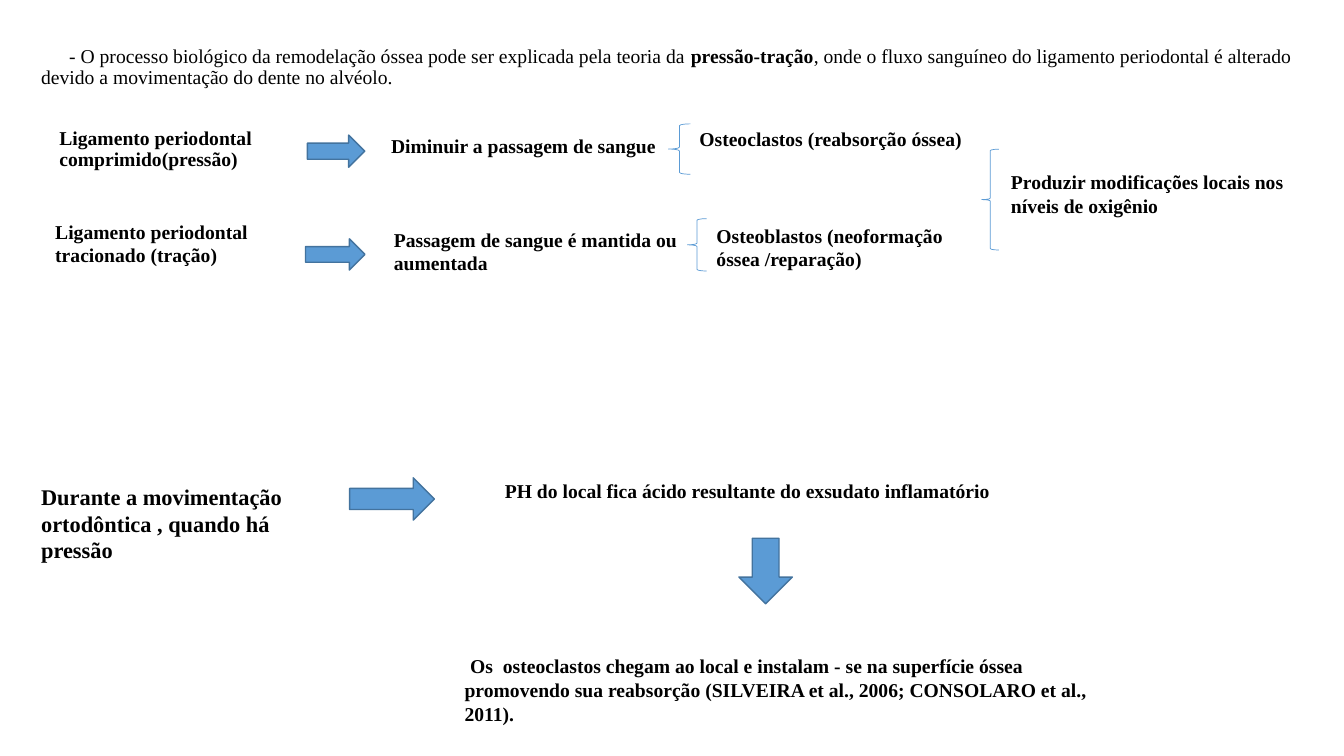
from pptx import Presentation
from pptx.dml.color import RGBColor
from pptx.enum.shapes import MSO_SHAPE as Preset
from pptx.enum.text import MSO_ANCHOR as Anchor, MSO_AUTO_SIZE as AutoSize
from pptx.util import Pt

SERIF = "Times New Roman"
BOLD = {"name": SERIF, "size": Pt(14), "bold": True}
PLAIN = {**BOLD, "bold": False}
LARGE = {**BOLD, "size": Pt(16)}
LEAD = {"name": "Calibri", "size": Pt(18), "bold": False}
BLACK, BLUE, DARK_BLUE = "000000", "5B9BD5", "43739E"


def color(hex_value):
    return RGBColor.from_string(hex_value)


def apply_format(target, values):
    for name, value in values.items():
        setattr(target, name, value)


def place(origin, offset):
    left, top, width, height = offset
    return Pt(origin[0] + left), Pt(origin[1] + top), Pt(width), Pt(height)


def add_text(slide, origin, offset, pieces, frame=None, paragraph=None):
    text_frame = slide.shapes.add_textbox(*place(origin, offset)).text_frame
    apply_format(text_frame, {"word_wrap": True, "auto_size": AutoSize.NONE, **(frame or {})})
    line = text_frame.paragraphs[0]
    apply_format(line, paragraph or {})
    for words, font_format in pieces:
        run = line.add_run()
        run.text = words
        apply_format(run.font, font_format)
        run.font.color.rgb = color(BLACK)


def add_arrow(slide, origin, offset, preset=Preset.RIGHT_ARROW):
    arrow = slide.shapes.add_shape(preset, *place(origin, offset))
    arrow.shadow.inherit = False
    arrow.fill.solid()
    arrow.fill.fore_color.rgb = color(BLUE)
    arrow.line.color.rgb = color(DARK_BLUE)
    arrow.line.width = Pt(1)


def add_brace(slide, origin, offset):
    brace = slide.shapes.add_shape(Preset.LEFT_BRACE, *place(origin, offset))
    brace.shadow.inherit = False
    brace.fill.background()
    brace.line.color.rgb = color(BLUE)
    brace.line.width = Pt(0.5)


def add_theory(slide, box):
    left, top, width, height = box
    pieces = [
        ("- O processo biológico da remodelação óssea pode ser explicada pela teoria da ", PLAIN),
        ("pressão-tração", BOLD),
        (", onde o fluxo sanguíneo do ligamento periodontal é alterado devido a "
         "movimentação do dente no alvéolo.", PLAIN),
    ]
    add_text(slide, (left, top), (0, 0, width, height), pieces,
             {"vertical_anchor": Anchor.MIDDLE}, {"line_spacing": 0.9})
    intro = slide.shapes[-1].text_frame.paragraphs[0]
    intro._p.get_or_add_pPr().set("indent", str(Pt(20)))


def add_pressure(slide, box):
    origin = box[:2]
    add_text(slide, origin, (0, 1.4, 171.4, 37.4),
             [("Ligamento periodontal comprimido(pressão)", BOLD)],
             paragraph={"line_spacing": 0.9})
    add_arrow(slide, origin, (184.3, 9.4, 41, 23))
    add_text(slide, origin, (236.9, 5, 330.5, 24.5), [("Diminuir a passagem de sangue", BOLD)])
    add_brace(slide, origin, (442.1, 1.4, 15.8, 36))
    add_text(slide, origin, (457.2, 0, 203.8, 24.5),
             [("Osteoclastos (reabsorção óssea)", BOLD)], {"word_wrap": False})


def add_traction(slide, box):
    origin = box[:2]
    add_text(slide, origin, (0, 0, 196.6, 41),
             [("Ligamento periodontal tracionado (tração)", BOLD)])
    add_arrow(slide, origin, (185.8, 17.2, 42.5, 22.3))
    add_text(slide, origin, (241.9, 5.7, 220.3, 41),
             [("Passagem de sangue é mantida ou aumentada", BOLD)])
    add_brace(slide, origin, (458.6, 2.8, 13.7, 37.4))
    add_text(slide, origin, (472.3, 2.8, 194.4, 41),
             [("Osteoblastos (neoformação óssea /reparação)", BOLD)])


def add_oxygen(slide, box):
    left, top, width, height = box
    add_brace(slide, (left, top), (0, 0, 12.2, height))
    add_text(slide, (left, top), (13.7, 11.5, width - 13.7, 41),
             [("Produzir modificações locais nos níveis de oxigênio", BOLD)])


def add_acid_cascade(slide, box):
    origin = box[:2]
    add_text(slide, origin, (0, 2.9, 200.9, 65.5),
             [("Durante a movimentação ortodôntica , quando há pressão", LARGE)])
    add_arrow(slide, origin, (227.5, 2.9, 60.5, 30.2))
    add_text(slide, origin, (331.2, 0, 363.6, 24.5),
             [("PH do local fica ácido resultante do exsudato inflamatório", BOLD)],
             {"word_wrap": False})
    add_arrow(slide, origin, (505.5, 46.1, 38.2, 46.8), Preset.DOWN_ARROW)
    add_text(slide, origin, (302.4, 121, 461.5, 79.9), [
        (" ", LEAD),
        ("Os  osteoclastos chegam ao local e instalam - se na superfície óssea promovendo "
         "sua reabsorção (SILVEIRA et al., 2006; CONSOLARO et al., 2011).", BOLD),
    ])


def main():
    deck = Presentation()
    apply_format(deck, {"slide_width": Pt(960), "slide_height": Pt(540)})
    slide = deck.slides.add_slide(deck.slide_layouts[6])
    add_theory(slide, (22.3, -5, 937.4, 106.5))
    add_pressure(slide, (35.3, 87.1, 661, 38.8))
    add_traction(slide, (32.4, 153.4, 666.7, 46.7))
    add_oxygen(slide, (701.3, 106.6, 247.7, 72))
    add_acid_cascade(slide, (22.3, 338.4, 763.9, 200.9))
    deck.save("out.pptx")


if __name__ == "__main__":
    main()
